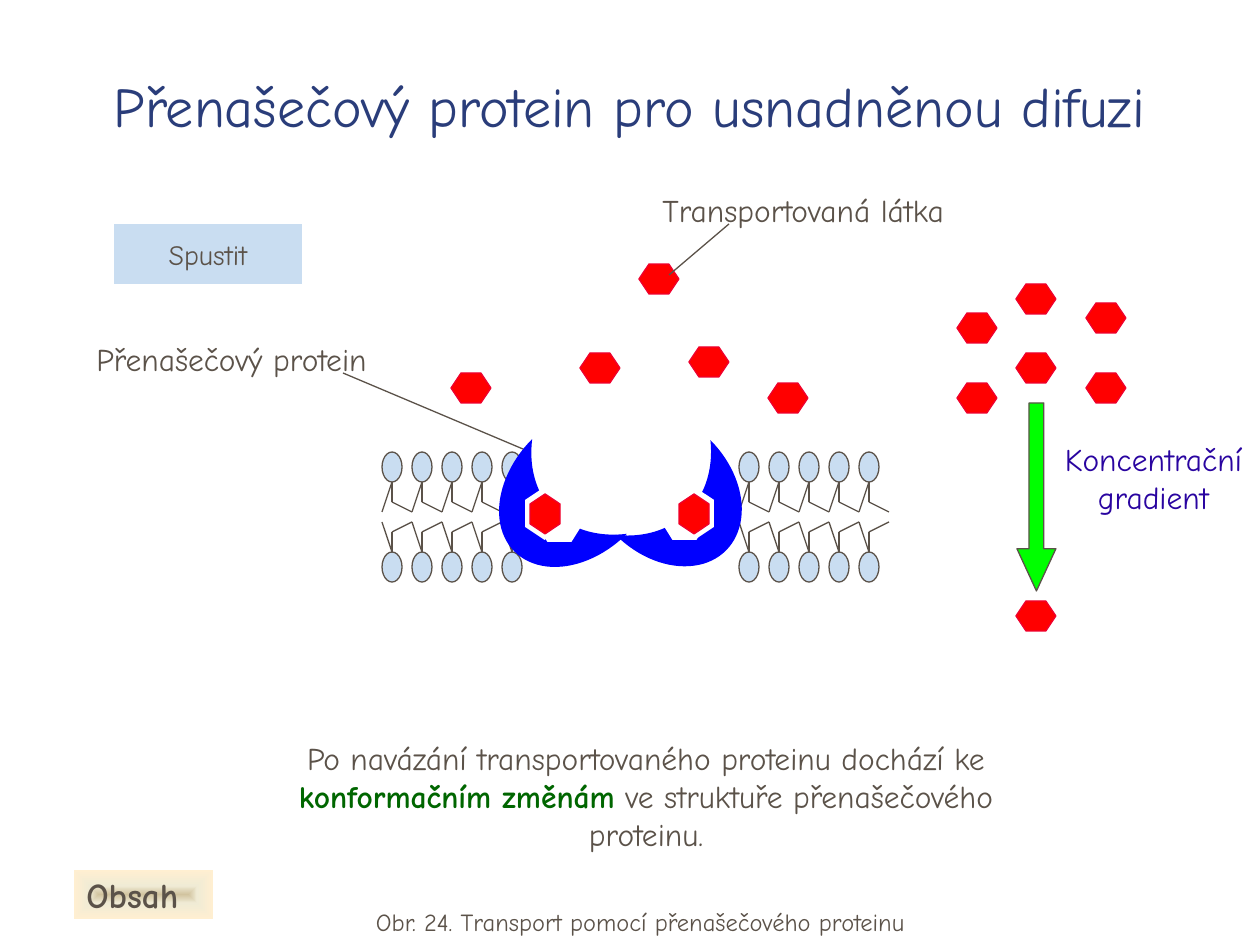
from dataclasses import dataclass

from lxml import etree
from pptx import Presentation
from pptx.dml.color import RGBColor
from pptx.enum.shapes import MSO_CONNECTOR, MSO_SHAPE
from pptx.enum.text import MSO_ANCHOR, PP_ALIGN
from pptx.oxml import parse_xml
from pptx.oxml.ns import nsdecls, qn
from pptx.shapes.autoshape import Shape
from pptx.util import Pt

EMU_PER_PX = 914400 / 126
FONT = "Comic Neue"
STRAIGHT = MSO_CONNECTOR.STRAIGHT
ELLIPSE, HEXAGON, MOON = MSO_SHAPE.OVAL, MSO_SHAPE.HEXAGON, MSO_SHAPE.MOON
DOWN_ARROW, BUTTON = MSO_SHAPE.DOWN_ARROW, MSO_SHAPE.ACTION_BUTTON_CUSTOM
LEFT, CENTER = PP_ALIGN.LEFT, PP_ALIGN.CENTER
TOP, MIDDLE, BOTTOM = MSO_ANCHOR.TOP, MSO_ANCHOR.MIDDLE, MSO_ANCHOR.BOTTOM

COLORS = {
    "text": "5B5249",
    "title": "2A3D7A",
    "emphasis": "006600",
    "gradient_label": "2904A0",
    "pale_blue": "C9DDF1",
    "red": "FF0000",
    "red_edge": "EF012E",
    "green": "00FF00",
    "blue": "0000FF",
    "white": "FFFFFF",
}
OBSAH_STOPS = ((0, "D1C39F"), (35, "F0EBD5"), (100, "FFEFD1"))


@dataclass(frozen=True)
class Box:
    left: int
    top: int
    width: int
    height: int

    def emu(self) -> tuple[int, ...]:
        return tuple(px(v) for v in (self.left, self.top, self.width, self.height))


@dataclass(frozen=True)
class Label:
    box: Box
    text: str
    size: int
    color: str = "text"
    align: PP_ALIGN = CENTER
    anchor: MSO_ANCHOR = TOP
    wrap: bool = True
    bold: bool = False
    emphasis: str = ""


@dataclass(frozen=True)
class Carrier:
    moon: Box
    moon_rotation: int
    lower_site: Box
    binding_site: Box
    bound_molecule: Box


TITLE = Label(Box(0, 26, 1260, 119), "Přenašečový protein pro usnadněnou difuzi",
              32, "title", anchor=BOTTOM)
LABELS = (
    Label(Box(84, 334, 319, 50), "Přenašečový protein", 18, align=LEFT, wrap=False),
    Label(Box(253, 733, 786, 126),
          "Po navázání transportovaného proteinu dochází ke konformačním změnám "
          "ve struktuře přenašečového proteinu.", 18, emphasis="konformačním změnám"),
    Label(Box(1022, 434, 263, 88), "Koncentrační gradient", 18, "gradient_label"),
    Label(Box(263, 901, 755, 42), "Obr. 24. Transport pomocí přenašečového proteinu", 14),
    Label(Box(650, 185, 336, 50), "Transportovaná látka", 18, align=LEFT, wrap=False),
)
SPUSTIT = Label(Box(114, 224, 188, 60), "Spustit", 16, anchor=MIDDLE, wrap=False)
OBSAH = Label(Box(74, 870, 139, 49), "Obsah", 20, align=LEFT, anchor=MIDDLE,
              wrap=False, bold=True)

# Top left corners of the free molecules
MOLECULES = (
    (451, 373), (580, 353), (639, 264), (689, 347), (768, 383),
    (957, 313), (957, 383), (1016, 284), (1016, 353), (1086, 303), (1086, 373),
    (1016, 601),
)
CARRIERS = (
    Carrier(Box(501, 452, 92, 134), 315, Box(535, 502, 49, 40),
            Box(518, 494, 53, 39), Box(525, 499, 40, 30)),
    Carrier(Box(650, 452, 89, 134), 225, Box(660, 500, 49, 40),
            Box(668, 494, 53, 39), Box(674, 499, 40, 30)),
)
LIPID_STARTS, LIPIDS_PER_SIDE, LIPID_STEP = (382, 739), 5, 30


def px(value: int) -> int:
    return round(value * EMU_PER_PX)


def rgb(name: str) -> RGBColor:
    return RGBColor.from_string(COLORS[name])


def add_shape(slide, kind: MSO_SHAPE, box: Box, fill: str, line: str = "",
              adjustments: tuple[float, ...] = (), rotation: int = 0) -> Shape:
    shape = slide.shapes.add_shape(kind, *box.emu())
    shape.shadow.inherit = False
    shape.rotation = rotation
    shape.fill.solid()
    shape.fill.fore_color.rgb = rgb(fill)
    if line:
        shape.line.color.rgb = rgb(line)
        shape.line.width = Pt(0.75)
    else:
        shape.line.fill.background()
    for index, value in enumerate(adjustments):
        shape.adjustments[index] = value
    return shape


def add_line(slide, start: tuple[int, int], end: tuple[int, int]) -> None:
    line = slide.shapes.add_connector(STRAIGHT, *map(px, start + end))
    line.line.color.rgb = rgb("text")
    line.line.width = Pt(0.75)
    etree.SubElement(line._element.spPr, qn("a:effectLst"))


def write_text(shape: Shape, label: Label) -> None:
    frame = shape.text_frame
    frame.word_wrap = label.wrap
    frame.vertical_anchor = label.anchor
    paragraph = frame.paragraphs[0]
    paragraph.alignment = label.align
    font = paragraph.font
    font.name, font.size, font.bold = FONT, Pt(label.size), label.bold
    font.color.rgb = rgb(label.color)
    parts = label.text.partition(label.emphasis) if label.emphasis else (label.text,)
    for part in parts:
        run = paragraph.add_run()
        run.text = part
        if part == label.emphasis:
            run.font.bold = True
            run.font.color.rgb = rgb("emphasis")


def add_label(slide, label: Label) -> None:
    write_text(slide.shapes.add_textbox(*label.box.emu()), label)


def add_button(slide, label: Label) -> Shape:
    button = add_shape(slide, BUTTON, label.box, "pale_blue")
    write_text(button, label)
    return button


def add_molecule(slide, box: Box, rotation: int = 0) -> None:
    add_shape(slide, HEXAGON, box, "red", "red_edge", (0.335,), rotation)


def add_lipid(slide, left: int, head_top: int, neck: int, direction: int) -> None:
    """Draw a head and its two tails, which run down (1) or up (-1)."""
    add_shape(slide, ELLIPSE, Box(left, head_top, 20, 30), "pale_blue", "text")
    center, elbow, tip = left + 10, neck + 20 * direction, neck + 30 * direction
    add_line(slide, (center, neck), (left, tip))
    add_line(slide, (center, neck), (center, elbow))
    add_line(slide, (center, elbow), (left + 30, tip))


def add_carrier(slide, carrier: Carrier) -> None:
    add_shape(slide, MOON, carrier.moon, "blue", "", (0.608,), carrier.moon_rotation)
    add_shape(slide, HEXAGON, carrier.lower_site, "white", "", (0.312,))
    add_shape(slide, HEXAGON, carrier.binding_site, "white", "", (0.333,), 90)
    add_molecule(slide, carrier.bound_molecule, 90)


def set_center_gradient(shape: Shape, stops: tuple[tuple[int, str], ...]) -> None:
    stop_xml = "".join(f'<a:gs pos="{position * 1000}"><a:srgbClr val="{color}"/></a:gs>'
                       for position, color in stops)
    gradient = parse_xml(
        f'<a:gradFill {nsdecls("a")} rotWithShape="1"><a:gsLst>{stop_xml}</a:gsLst>'
        '<a:path path="rect"><a:fillToRect l="50000" t="50000" r="50000" b="50000"/>'
        '</a:path></a:gradFill>')
    properties = shape._element.spPr
    properties.replace(properties.find(qn("a:solidFill")), gradient)


def main() -> None:
    presentation = Presentation()
    presentation.slide_width, presentation.slide_height = px(1260), px(945)
    slide = presentation.slides.add_slide(presentation.slide_layouts[6])

    # Membrane
    for start in LIPID_STARTS:
        for index in range(LIPIDS_PER_SIDE):
            left = start + index * LIPID_STEP
            add_lipid(slide, left, 452, 482, 1)
            add_lipid(slide, left, 552, 552, -1)

    # Title, labels and leader lines
    add_label(slide, TITLE)
    add_line(slide, (530, 452), (343, 373))
    for label in LABELS:
        add_label(slide, label)

    # Carrier protein
    for carrier in CARRIERS:
        add_carrier(slide, carrier)

    # Free molecules and concentration gradient
    for left, top in MOLECULES:
        add_molecule(slide, Box(left, top, 40, 30))
    add_line(slide, (669, 275), (729, 224))
    add_shape(slide, DOWN_ARROW, Box(1017, 403, 39, 188), "green", "text", (0.381, 1.083))

    # Buttons
    add_button(slide, SPUSTIT)
    set_center_gradient(add_button(slide, OBSAH), OBSAH_STOPS)

    presentation.save("out.pptx")


if __name__ == "__main__":
    main()
